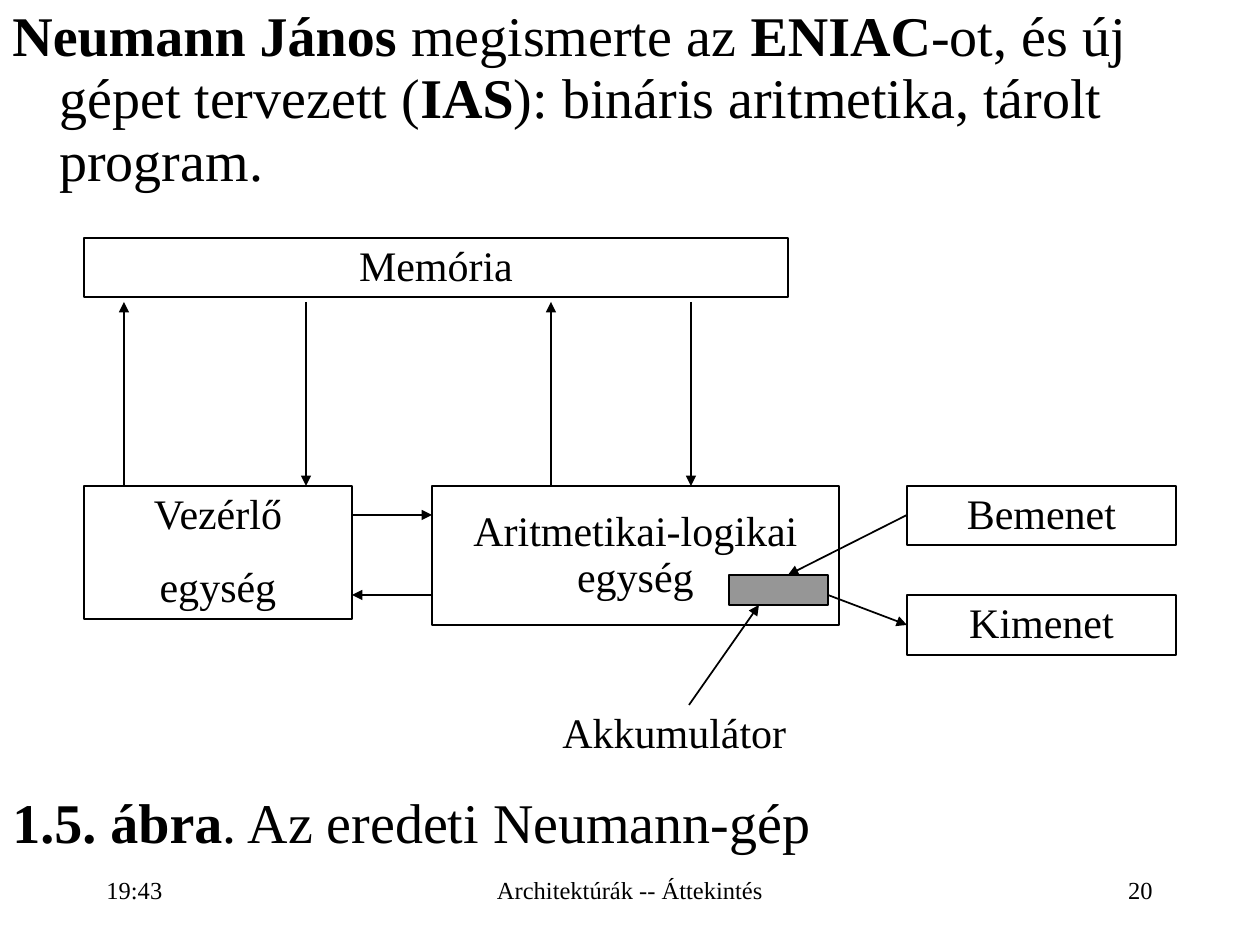
from lxml import etree
from pptx import Presentation
from pptx import util as u
from pptx.dml.color import RGBColor
from pptx.enum import shapes, text
from pptx.oxml.ns import qn

PX = 914400 // 126
FONT = "Times New Roman"
BLACK = "000000"
LEFT, CENTER, RIGHT = text.PP_ALIGN.LEFT, text.PP_ALIGN.CENTER, text.PP_ALIGN.RIGHT
TOP, MIDDLE = text.MSO_ANCHOR.TOP, text.MSO_ANCHOR.MIDDLE


def px(*values):
    return [u.Emu(value * PX) for value in values]


def color(hex_string):
    return RGBColor.from_string(hex_string)


def write(shape, paragraphs, size, align=LEFT, anchor=TOP, hanging=0):
    """Fill a shape with paragraphs, each a list of (text, bold) runs."""
    frame = shape.text_frame
    frame.word_wrap = True
    frame.vertical_anchor = anchor
    for index, runs in enumerate(paragraphs):
        paragraph = frame.paragraphs[0] if index == 0 else frame.add_paragraph()
        paragraph.alignment = align
        paragraph.line_spacing = 0.93
        if index:
            paragraph.space_before = u.Pt(15)
        if hanging:
            properties = paragraph._p.get_or_add_pPr()
            properties.set("marL", str(hanging * PX))
            properties.set("indent", str(-hanging * PX))
        for words, bold in runs:
            run = paragraph.add_run()
            run.text = words
            run.font.name = FONT
            run.font.size = u.Pt(size)
            run.font.bold = bold
            run.font.color.rgb = color(BLACK)


def add_text(slide, bounds, runs, size, **layout):
    write(slide.shapes.add_textbox(*px(*bounds)), [runs], size, **layout)


def add_unit(slide, bounds, lines=(), fill=None, anchor=TOP):
    shape = slide.shapes.add_shape(shapes.MSO_SHAPE.RECTANGLE, *px(*bounds))
    shape.shadow.inherit = False
    if fill:
        shape.fill.solid()
        shape.fill.fore_color.rgb = color(fill)
    else:
        shape.fill.background()
    shape.line.color.rgb = color(BLACK)
    shape.line.width = u.Pt(1)
    write(shape, [[(line, False)] for line in lines], 24, CENTER, anchor)


def add_arrow(slide, start, end):
    arrow = slide.shapes.add_connector(
        shapes.MSO_CONNECTOR.STRAIGHT, *px(*start, *end))
    arrow.line.color.rgb = color(BLACK)
    arrow.line.width = u.Pt(1)
    etree.SubElement(arrow.line._get_or_add_ln(), qn("a:tailEnd"), type="triangle")
    etree.SubElement(arrow._element.spPr, qn("a:effectLst"))


def add_diagram(slide):
    memory_edge, unit_top = 302, 486
    add_unit(slide, (84, 238, 704, 59), ["Memória"])
    add_unit(slide, (84, unit_top, 268, 133), ["Vezérlő", "egység"])
    add_unit(slide, (432, unit_top, 407, 139), ["Aritmetikai-logikai egység"],
             anchor=MIDDLE)
    add_unit(slide, (729, 575, 99, 30), fill="969696")
    add_unit(slide, (907, unit_top, 269, 59), ["Bemenet"])
    add_unit(slide, (907, 595, 269, 60), ["Kimenet"])
    add_text(slide, (550, 705, 267, 59), [("Akkumulátor", False)], 24)

    for x in (124, 551):
        add_arrow(slide, (x, unit_top), (x, memory_edge))
    for x in (306, 691):
        add_arrow(slide, (x, memory_edge), (x, unit_top))
    for start, end in [
        ((352, 515), (432, 515)),
        ((432, 595), (352, 595)),
        ((907, 515), (788, 575)),
        ((828, 595), (907, 625)),
        ((689, 705), (759, 605)),
    ]:
        add_arrow(slide, start, end)


def add_footer(slide):
    for left, width, words, align in [
        (94, 262, "19:43", LEFT),
        (431, 398, "Architektúrák -- Áttekintés", CENTER),
        (903, 262, "20", RIGHT),
    ]:
        add_text(slide, (left, 860, width, 62), [(words, False)], 14,
                 align=align, anchor=MIDDLE)


def main():
    presentation = Presentation()
    presentation.slide_width, presentation.slide_height = u.Inches(10), u.Inches(7.5)
    slide = presentation.slides.add_slide(presentation.slide_layouts[6])
    add_text(slide, (0, 0, 1260, 200), [
        ("Neumann János", True),
        (" megismerte az ", False),
        ("ENIAC", True),
        ("-ot, és új gépet tervezett (", False),
        ("IAS", True),
        ("): bináris aritmetika, tárolt program.", False),
    ], 32, hanging=47)
    add_diagram(slide)
    add_text(slide, (0, 787, 1260, 75), [
        ("1.5. ábra", True),
        (". Az eredeti Neumann-gép", False),
    ], 32, hanging=47)
    add_footer(slide)
    presentation.save("out.pptx")


if __name__ == "__main__":
    main()
